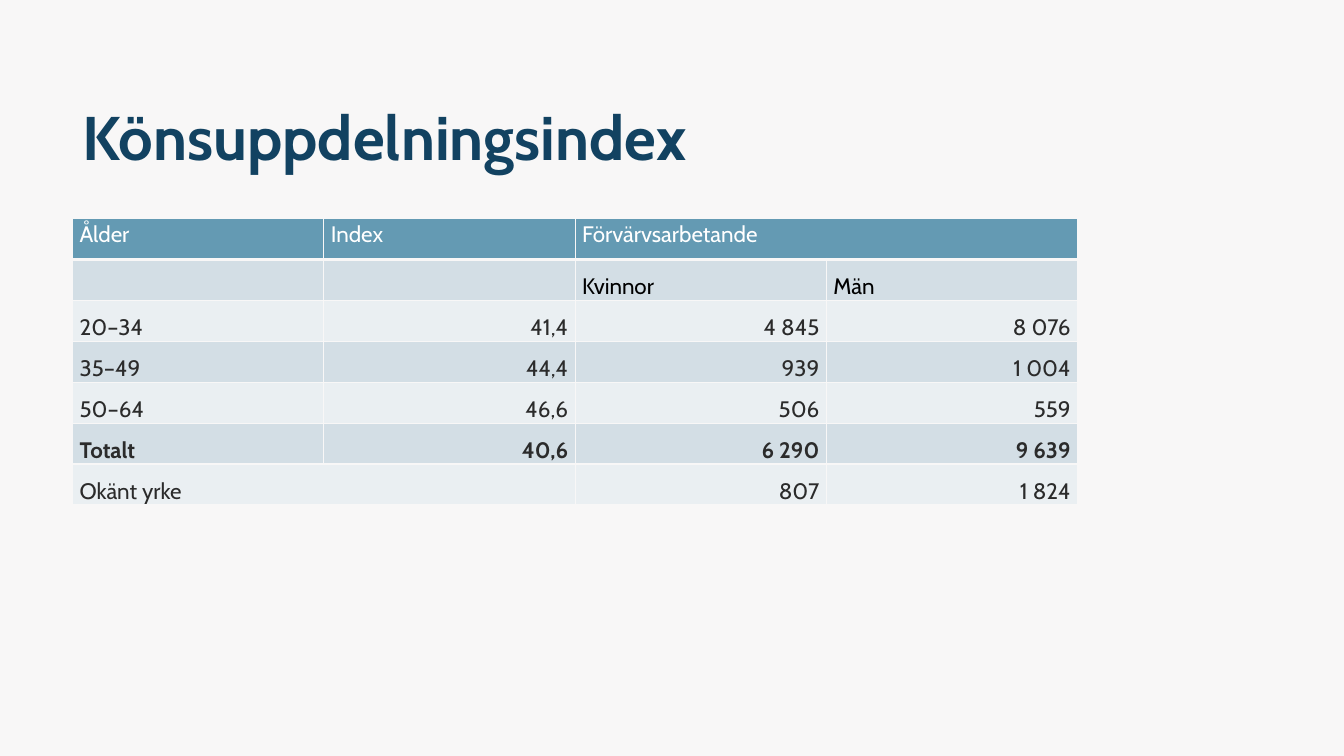
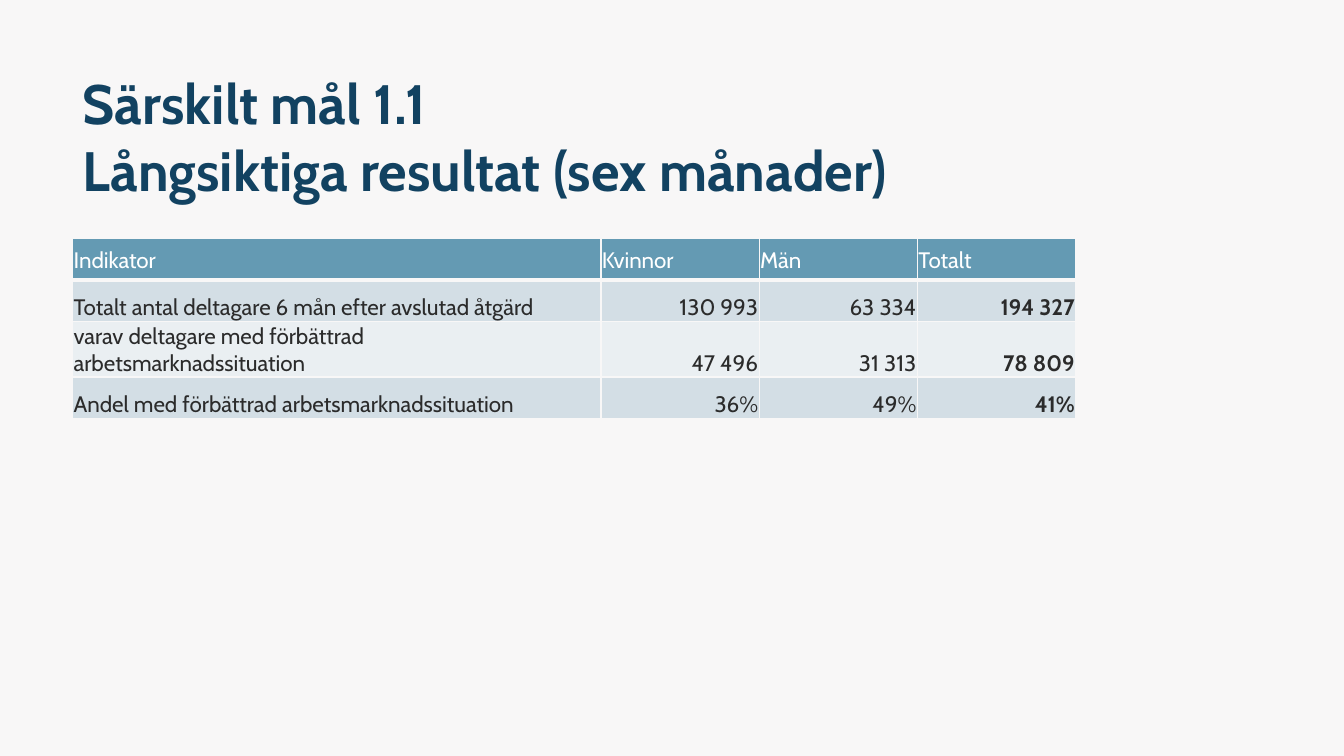
from lxml import etree
from pptx import Presentation
from pptx.dml.color import RGBColor
from pptx.enum import text
from pptx.oxml.ns import qn
from pptx.util import Inches, Pt

FONT = "Cabin"
COLORS = {
    "background": "F8F7F7",
    "title": "124261",
    "header": "649AB3",
    "header_text": "FFFFFF",
    "band_dark": "D3DEE5",
    "band_light": "EAEFF2",
    "subheader_text": "000000",
    "body_text": "2B2B2B",
}
LEFT, WIDTH = 0.72, 9.97
TITLE_BOX = (LEFT, 0.62, WIDTH, 1.45)

GENDER_INDEX = [
    ["Ålder", "Index", "Förvärvsarbetande", ""],
    ["", "", "Kvinnor", "Män"],
    ["20–34", "41,4", "4 845", "8 076"],
    ["35–49", "44,4", "939", "1 004"],
    ["50–64", "46,6", "506", "559"],
    ["Totalt", "40,6", "6 290", "9 639"],
    ["Okänt yrke", "", "807", "1 824"],
]
LONG_TERM_RESULTS = [
    ["Indikator", "Kvinnor", "Män", "Totalt"],
    ["Totalt antal deltagare 6 mån efter avslutad åtgärd", "130 993", "63 334", "194 327"],
    ["varav deltagare med förbättrad arbetsmarknadssituation", "47 496", "31 313", "78 809"],
    ["Andel med förbättrad arbetsmarknadssituation", "36%", "49%", "41%"],
]


def rgb(name):
    return RGBColor.from_string(COLORS[name])


def format_run(r, size, color, bold):
    r.font.name = FONT
    r.font.size = Pt(size)
    r.font.bold = bold
    r.font.color.rgb = rgb(color)


def add_titled_slide(prs, title, size):
    slide = prs.slides.add_slide(prs.slide_layouts[5])
    sp = slide.shapes.title
    sp.left, sp.top, sp.width, sp.height = map(Inches, TITLE_BOX)
    tf = sp.text_frame
    tf.text = title
    tf.word_wrap = True
    tf.auto_size = text.MSO_AUTO_SIZE.NONE
    tf.vertical_anchor = text.MSO_ANCHOR.MIDDLE
    p = tf.paragraphs[0]
    p.alignment = text.PP_ALIGN.LEFT
    for r in p.runs:
        format_run(r, size, "title", True)
    for line_break in p._p.findall(qn("a:br")):
        etree.SubElement(line_break, qn("a:rPr"), sz=str(round(size * 100)))
    return slide


def set_borders(cell, row):
    """Thin rules everywhere, with a thick one below the header row."""
    widths = {"L": 1, "R": 1, "T": 3 if row == 1 else 1, "B": 3 if row == 0 else 1}
    tc_pr = cell._tc.get_or_add_tcPr()
    for side, width in widths.items():
        line = etree.SubElement(tc_pr, qn(f"a:ln{side}"), w=str(Pt(width)))
        fill = etree.SubElement(line, qn("a:solidFill"))
        etree.SubElement(fill, qn("a:srgbClr"), val=COLORS["background"])


def fill_cell(cell, rows, row, col, margins, line_spacing, space_after):
    value = rows[row][col]
    is_header = row == 0
    is_number = col > 0 and value[:1].isdigit()
    is_total = not is_header and "Totalt" in (rows[row][0], rows[0][col])

    set_borders(cell, row)
    cell.fill.solid()
    band = "band_dark" if row % 2 else "band_light"
    cell.fill.fore_color.rgb = rgb("header" if is_header else band)
    cell.margin_left = cell.margin_right = Inches(margins[0])
    cell.margin_top, cell.margin_bottom = Inches(margins[1]), 0
    anchors = text.MSO_ANCHOR
    cell.vertical_anchor = anchors.MIDDLE if is_header else anchors.BOTTOM

    cell.text_frame.text = value
    p = cell.text_frame.paragraphs[0]
    p.alignment = text.PP_ALIGN.RIGHT if is_number else text.PP_ALIGN.LEFT
    p.line_spacing = line_spacing
    p.space_after = space_after
    if is_header:
        color = "header_text"
    elif col > 0 and not is_number:
        color = "subheader_text"
    else:
        color = "body_text"
    for r in p.runs:
        format_run(r, 16, color, is_total)


def add_data_table(slide, rows, top, col_widths, row_heights, margins,
                   line_spacing=None, space_after=None):
    """margins holds the side and top cell margins in inches."""
    table = slide.shapes.add_table(
        len(rows), len(col_widths), Inches(LEFT), Inches(top),
        Inches(sum(col_widths)), Inches(sum(row_heights))).table
    for column, width in zip(table.columns, col_widths):
        column.width = Inches(width)
    for table_row, height in zip(table.rows, row_heights):
        table_row.height = Inches(height)
    for row in range(len(rows)):
        for col in range(len(col_widths)):
            fill_cell(table.cell(row, col), rows, row, col,
                      margins, line_spacing, space_after)
    return table


def add_gender_index_slide(prs):
    slide = add_titled_slide(prs, "Könsuppdelningsindex", 44)
    count = len(GENDER_INDEX)
    table = add_data_table(slide, GENDER_INDEX, 2.17, [WIDTH / 4] * 4,
                           [2.84 / count] * count, (0.07, 0), Pt(13), Pt(2))
    table.cell(0, 2).merge(table.cell(0, 3))
    table.cell(count - 1, 0).merge(table.cell(count - 1, 1))


def add_long_term_slide(prs):
    slide = add_titled_slide(
        prs, "Särskilt mål 1.1\vLångsiktiga resultat (sex månader)", 39.6)
    add_data_table(slide, LONG_TERM_RESULTS, 2.37, [5.24] + [1.57] * 3,
                   [0.41, 0.41, 0.55, 0.41], (0.01, 0.01))


def main():
    prs = Presentation()
    prs.slide_width, prs.slide_height = Inches(13.33), Inches(7.5)
    background = prs.slide_master.background.fill
    background.solid()
    background.fore_color.rgb = rgb("background")
    add_gender_index_slide(prs)
    add_long_term_slide(prs)
    prs.save("out.pptx")


if __name__ == "__main__":
    main()
